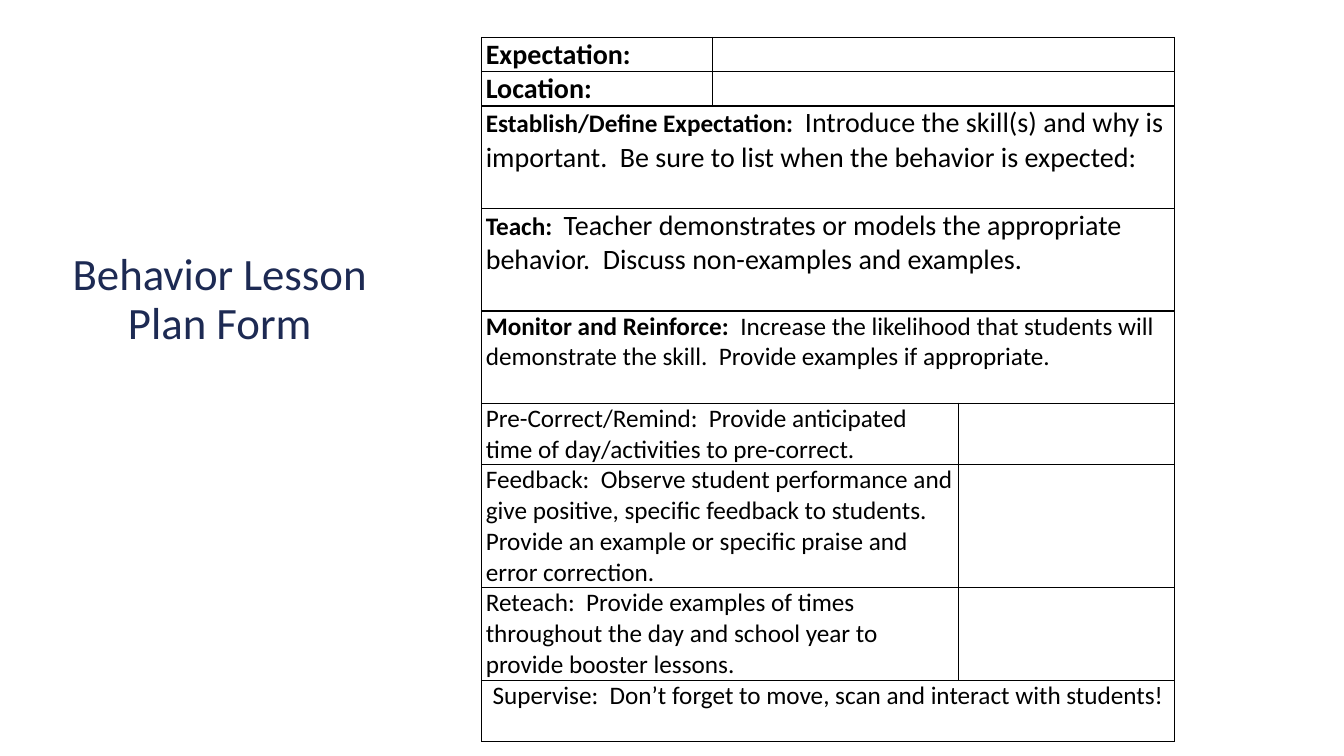
import pptx
import pptx.dml.color
import pptx.enum.text
import pptx.oxml
import pptx.oxml.ns
import pptx.util

ALIGN = pptx.enum.text.PP_ALIGN
ANCHOR = pptx.enum.text.MSO_ANCHOR
LINE_FACTOR = 1.22  # line height of the font, relative to its size


def colour(hex_string):
    return pptx.dml.color.RGBColor.from_string(hex_string)


class FormSlide:
    """Holds the style and the slide; lengths are percentages of the slide size."""

    font, ink, navy = "Calibri", "000000", "1D2A53"

    def __init__(self, deck):
        self.deck = deck
        self.slide = deck.slides.add_slide(deck.slide_layouts[5])

    def across(self, percent):
        return round(self.deck.slide_width * percent / 100)

    def down(self, percent):
        return round(self.deck.slide_height * percent / 100)

    def style(self, run, size, hex_string, bold=False):
        run.font.name, run.font.size, run.font.bold = self.font, pptx.util.Pt(size), bold
        run.font.color.rgb = colour(hex_string)

    def title(self, text, left, top, width, height):
        heading = self.slide.shapes.title
        heading.left, heading.top = self.across(left), self.down(top)
        heading.width, heading.height = self.across(width), self.down(height)
        frame = heading.text_frame
        frame.text = text
        frame.word_wrap = True
        frame.vertical_anchor = ANCHOR.MIDDLE
        frame.paragraphs[0].alignment = ALIGN.CENTER
        frame.paragraphs[0].line_spacing = 0.9
        self.style(frame.paragraphs[0].runs[0], 32, self.navy)

    def borders(self, cell):
        properties = cell._tc.get_or_add_tcPr()
        for position, side in enumerate(("lnL", "lnR", "lnT", "lnB")):
            properties.insert(position, pptx.oxml.parse_xml(
                f'<a:{side} {pptx.oxml.ns.nsdecls("a")} w="12700"><a:solidFill>'
                f'<a:srgbClr val="{self.ink}"/></a:solidFill></a:{side}>'))

    def fill_in(self, cell, parts, alignment):
        paragraph = cell.text_frame.paragraphs[0]
        paragraph.alignment = alignment
        for text, size, bold in parts:
            run = paragraph.add_run()
            run.text = text
            self.style(run, size, self.ink, bold)

    def form(self, sections, left, top, columns):
        widths = [self.across(column) for column in columns]
        heights = [pptx.util.Pt(lines * size * LINE_FACTOR)
                   for lines, size, *_ in sections]
        table = self.slide.shapes.add_table(
            len(sections), len(columns), self.across(left), self.down(top),
            sum(widths), sum(heights)).table
        table.first_row = table.horz_banding = False
        for column, width in zip(table.columns, widths):
            column.width = width
        for row, height in zip(table.rows, heights):
            row.height = height
        for cell in table.iter_cells():
            cell.fill.background()
            cell.margin_top = cell.margin_bottom = 0
            cell.margin_left = cell.margin_right = pptx.util.Inches(0.04)
            self.borders(cell)
        for index, (_, _, (first, last), alignment, parts) in enumerate(sections):
            if first < last:
                table.cell(index, first).merge(table.cell(index, last))
            self.fill_in(table.cell(index, 0), parts, alignment)


# Each section: lines of room, size of a line, merged columns, alignment, text parts
FULL, ANSWER, PROMPT = (0, 2), (1, 2), (0, 1)
SECTIONS = [
    (1, 20, ANSWER, ALIGN.LEFT, [("Expectation:", 20, True)]),
    (1, 20, ANSWER, ALIGN.LEFT, [("Location:", 20, True)]),
    (3, 20, FULL, ALIGN.LEFT, [
        ("Establish/Define Expectation:  ", 18, True),
        ("Introduce the skill(s) and why is important.  Be sure to list when "
         "the behavior is expected:", 20, False)]),
    (3, 20, FULL, ALIGN.LEFT, [
        ("Teach:  ", 18, True),
        ("Teacher demonstrates or models the appropriate behavior.  Discuss "
         "non-examples and examples.", 20, False)]),
    (3, 18, FULL, ALIGN.LEFT, [
        ("Monitor and Reinforce:  ", 18, True),
        ("Increase the likelihood that students will demonstrate the skill.  "
         "Provide examples if appropriate.", 18, False)]),
    (2, 18, PROMPT, ALIGN.LEFT, [
        ("Pre-Correct/Remind:  Provide anticipated time of day/activities to "
         "pre-correct.", 18, False)]),
    (4, 18, PROMPT, ALIGN.LEFT, [
        ("Feedback:  Observe student performance and give positive, specific "
         "feedback to students.  Provide an example or specific praise and "
         "error correction.", 18, False)]),
    (3, 18, PROMPT, ALIGN.LEFT, [
        ("Reteach:  Provide examples of times throughout the day and school "
         "year to provide booster lessons.", 18, False)]),
    (2, 18, FULL, ALIGN.CENTER, [
        ("Supervise:  Don’t forget to move, scan and interact with students!",
         18, False)]),
]


def main():
    deck = pptx.Presentation()
    deck.slide_width, deck.slide_height = pptx.util.Inches(13.33), pptx.util.Inches(7.5)
    lesson_plan = FormSlide(deck)

    # Title on the left, form on the right
    lesson_plan.title("Behavior Lesson Plan Form", 3.08, 26.93, 26.56, 25.6)
    lesson_plan.form(SECTIONS, 35.85, 4.95, columns=(17.18, 18.3, 16.05))

    deck.save("out.pptx")


if __name__ == "__main__":
    main()
